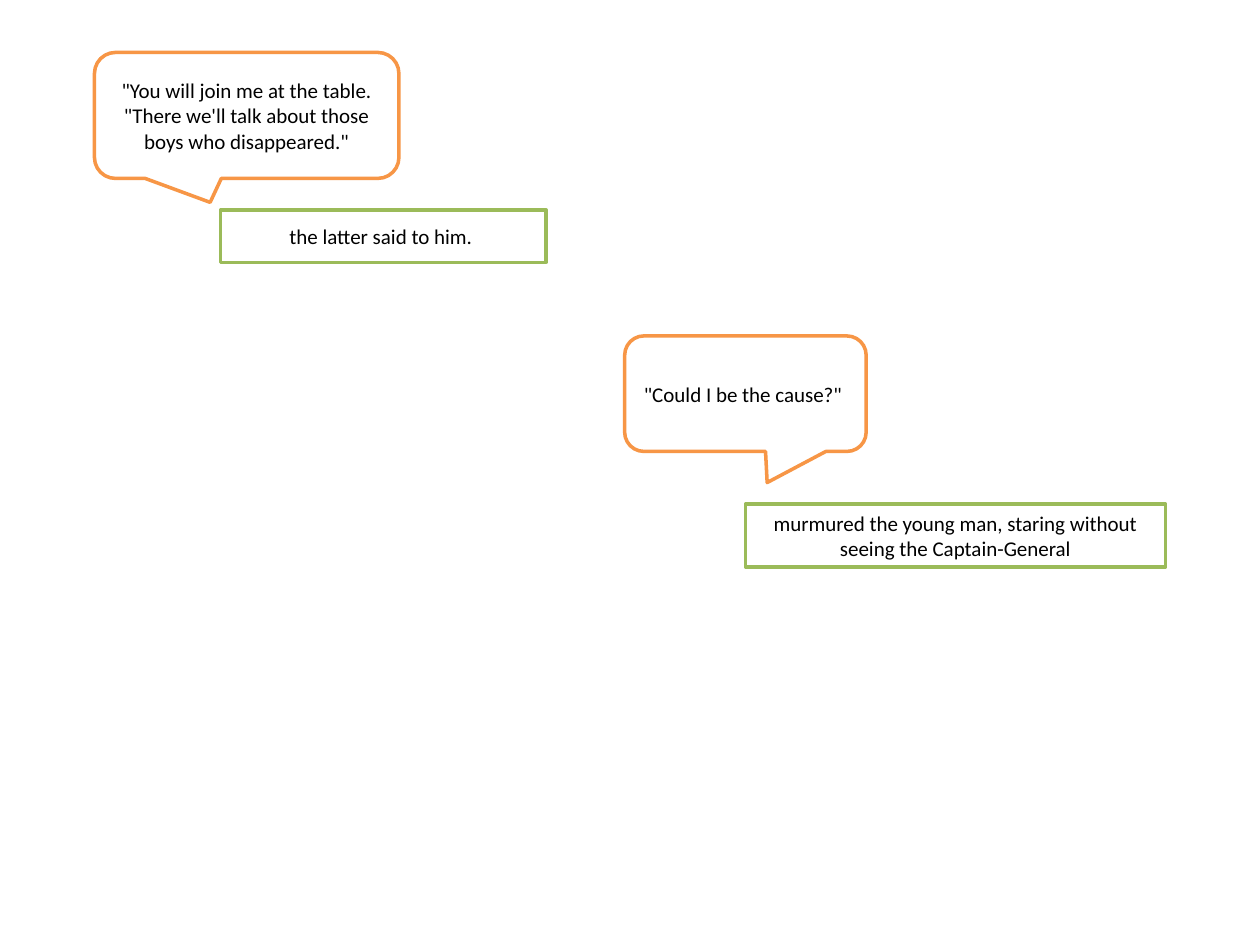
from dataclasses import dataclass

from pptx import Presentation
from pptx.dml.color import RGBColor
from pptx.enum.shapes import MSO_SHAPE
from pptx.enum.text import MSO_ANCHOR, PP_ALIGN
from pptx.util import Inches, Pt

COLUMNS, ROWS = 120, 90
CELL = Inches(10) / COLUMNS


@dataclass(frozen=True)
class Theme:
    font: str = "Calibri"
    text_size: int = 12
    line_width: int = 2
    text: str = "000000"
    paper: str = "FFFFFF"
    speech: str = "F79646"
    narration: str = "9BBB59"


THEME = Theme()


def write_text(shape, text, size=THEME.text_size, color=THEME.text, align=PP_ALIGN.CENTER):
    frame = shape.text_frame
    frame.word_wrap = True
    frame.vertical_anchor = MSO_ANCHOR.MIDDLE
    paragraph = frame.paragraphs[0]
    paragraph.alignment = align
    run = paragraph.add_run()
    run.text = text
    run.font.name = THEME.font
    run.font.size = Pt(size)
    run.font.color.rgb = RGBColor.from_string(color)


def add_outlined_shape(slide, kind, box, text, line_color):
    shape = slide.shapes.add_shape(kind, *(round(cells * CELL) for cells in box))
    shape.shadow.inherit = False
    shape.fill.solid()
    shape.fill.fore_color.rgb = RGBColor.from_string(THEME.paper)
    shape.line.color.rgb = RGBColor.from_string(line_color)
    shape.line.width = Pt(THEME.line_width)
    write_text(shape, text)
    return shape


def add_exchange(slide, box, speech_size, narration_size, tail, speech, narration):
    left, top, width, height = box
    speech_width, speech_height = speech_size
    narration_width, narration_height = narration_size
    bubble = add_outlined_shape(
        slide, MSO_SHAPE.ROUNDED_RECTANGULAR_CALLOUT,
        (left, top, speech_width, speech_height), speech, THEME.speech)
    bubble.adjustments[0], bubble.adjustments[1] = tail
    bubble.adjustments[2] = 1 / 6
    add_outlined_shape(
        slide, MSO_SHAPE.RECTANGLE,
        (left + width - narration_width, top + height - narration_height,
         narration_width, narration_height), narration, THEME.narration)


def main():
    presentation = Presentation()
    presentation.slide_width = round(COLUMNS * CELL)
    presentation.slide_height = round(ROWS * CELL)
    slide = presentation.slides.add_slide(presentation.slide_layouts[6])
    add_exchange(
        slide, box=(9, 5, 43, 20), speech_size=(29, 12), narration_size=(31, 5),
        tail=(-0.12, 0.69),
        speech="\"You will join me at the table. \"There we'll talk about those boys who disappeared.\"",
        narration="the latter said to him. ")
    add_exchange(
        slide, box=(59.5, 32, 51.5, 22), speech_size=(23, 11), narration_size=(40, 6),
        tail=(0.09, 0.77),
        speech="\"Could I be the cause?\" ",
        narration="murmured the young man, staring without seeing the Captain-General")
    presentation.save("out.pptx")


if __name__ == "__main__":
    main()
